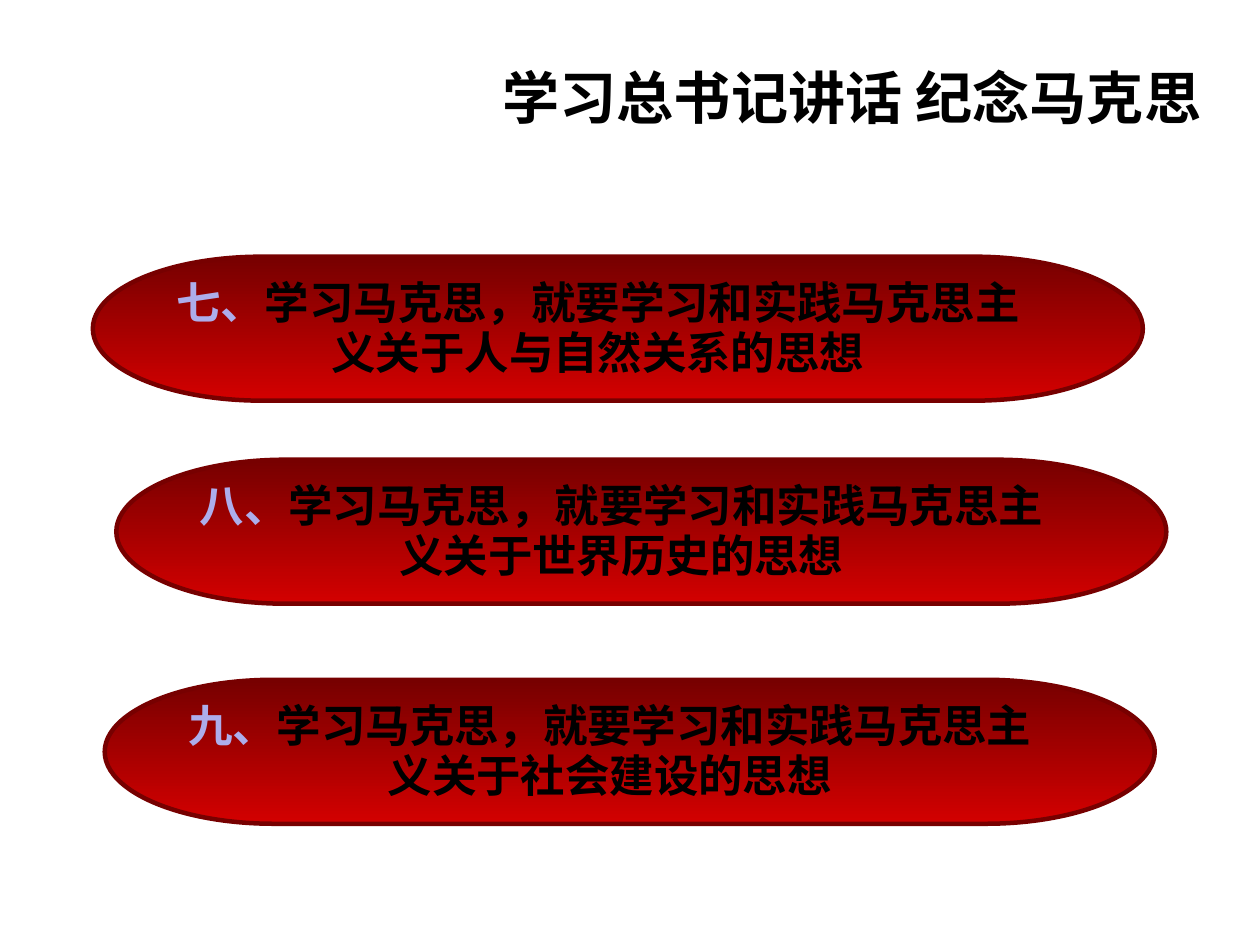
from lxml import etree
from pptx import Presentation
from pptx.dml.color import RGBColor
from pptx.enum.shapes import MSO_SHAPE as Shape
from pptx.enum.text import MSO_ANCHOR as Anchor, MSO_AUTO_SIZE as AutoSize, PP_ALIGN as Align
from pptx.oxml.ns import qn
from pptx.util import Pt

CHINESE_FONT = "Noto Sans CJK SC"


def rgb(hex_color):
    return RGBColor.from_string(hex_color)


class SlideBuilder:
    dark_red, bright_red = "770000", "D30000"
    ink, number_color, number_outline = "000000", "ADADEB", "3333CC"
    line_spacing = 0.95

    def __init__(self, deck):
        self.slide = deck.slides.add_slide(deck.slide_layouts[5])

    def format_run(self, run, size, color, latin=CHINESE_FONT):
        font = run.font
        font.size, font.bold, font.name = Pt(size), True, latin
        font.color.rgb = rgb(color)
        east_asian = etree.Element(qn("a:ea"), typeface=CHINESE_FONT)
        font._element.find(qn("a:latin")).addnext(east_asian)

    def outline_run(self, run, color, width):
        outline = etree.Element(qn("a:ln"), w=str(Pt(width)))
        fill = etree.SubElement(outline, qn("a:solidFill"))
        etree.SubElement(fill, qn("a:srgbClr"), val=color)
        run.font._element.insert(0, outline)

    def title(self, text, left, top, width, height):
        heading = self.slide.shapes.title
        heading.left, heading.top = Pt(left), Pt(top)
        heading.width, heading.height = Pt(width), Pt(height)
        frame = heading.text_frame
        frame.text = text
        frame.word_wrap = True
        frame.auto_size = AutoSize.SHAPE_TO_FIT_TEXT
        frame.vertical_anchor = Anchor.TOP
        paragraph = frame.paragraphs[0]
        paragraph.alignment = Align.RIGHT
        paragraph.line_spacing = self.line_spacing
        self.format_run(paragraph.runs[0], 36, self.ink, "Arial")

    def lesson(self, number, text, left, top, width=661.5, height=90.7):
        """Draw a rounded red bar holding a numbered lesson."""
        bar = self.slide.shapes.add_shape(
            Shape.FLOWCHART_TERMINATOR, Pt(left), Pt(top), Pt(width), Pt(height))
        bar.shadow.inherit = False
        bar.fill.gradient()
        bar.fill.gradient_angle = 270
        for stop, color in zip(bar.fill.gradient_stops, (self.dark_red, self.bright_red)):
            stop.color.rgb = rgb(color)
        bar.line.color.rgb = rgb(self.dark_red)
        bar.line.width = Pt(2.83)

        frame = bar.text_frame
        frame.word_wrap = True
        frame.vertical_anchor = Anchor.MIDDLE
        frame.margin_left, frame.margin_right = Pt(8.6), Pt(33.8)
        frame.margin_top, frame.margin_bottom = Pt(5.8), Pt(5)
        paragraph = frame.paragraphs[0]
        paragraph.alignment = Align.CENTER
        paragraph.line_spacing = self.line_spacing
        for part, color in ((number, self.number_color), (text, self.ink)):
            run = paragraph.add_run()
            run.text = part
            self.format_run(run, 28, color)
        self.outline_run(paragraph.runs[0], self.number_outline, 1.75)


def main():
    deck = Presentation()
    deck.slide_width, deck.slide_height = Pt(793.75), Pt(595.25)
    builder = SlideBuilder(deck)
    builder.title("学习总书记讲话 纪念马克思", 277.2, 38.9, 486.7, 48.2)
    lessons = (
        ("七、", "人与自然关系", 58.5, 161.7),
        ("八、", "世界历史", 73.3, 289.6),
        ("九、", "社会建设", 66, 428.2),
    )
    for number, topic, left, top in lessons:
        text = f"学习马克思，就要学习和实践马克思主义关于{topic}的思想"
        builder.lesson(number, text, left, top)
    deck.save("out.pptx")


if __name__ == "__main__":
    main()
